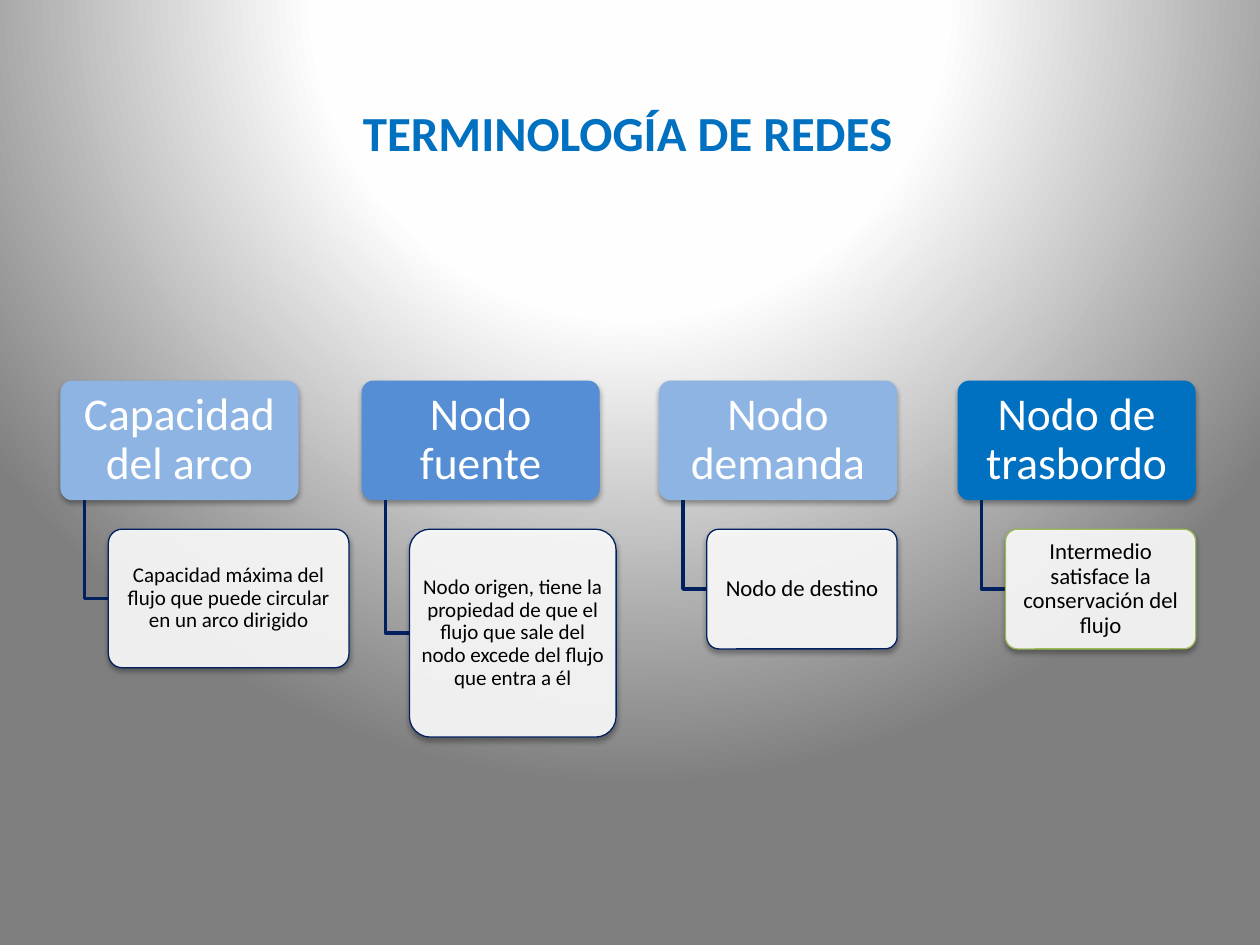
from dataclasses import dataclass

from pptx import Presentation
from pptx.dml.color import RGBColor
from pptx.enum.shapes import MSO_SHAPE
from pptx.enum.text import MSO_ANCHOR, PP_ALIGN
from pptx.oxml import parse_xml
from pptx.oxml.ns import nsdecls, qn
from pptx.util import Inches, Pt


@dataclass(frozen=True)
class Theme:
    font: str = "Calibri"
    blue: str = "0070C0"
    mid: str = "558ED5"
    pale: str = "8EB4E3"
    navy: str = "002060"
    green: str = "9BBB59"
    white: str = "FFFFFF"
    black: str = "000000"
    title: int = 28
    head: int = 26
    note: int = 13
    small: int = 12


@dataclass(frozen=True)
class Branch:
    left: float
    head: str
    fill: str
    note: str
    width: float
    height: float
    size: int
    edge: str


THEME = Theme()
TOP, WIDTH, HEIGHT = 3.02, 1.89, 0.95
STEM, INDENT, NOTE_TOP = 0.19, 0.38, 4.2

BRANCHES = [
    Branch(0.48, "Capacidad del arco", THEME.pale,
           "Capacidad máxima del flujo que puede circular en un arco dirigido",
           1.91, 1.1, THEME.small, THEME.navy),
    Branch(2.87, "Nodo fuente", THEME.mid,
           "Nodo origen, tiene la propiedad de que el flujo que sale del nodo "
           "excede del flujo que entra a él",
           1.64, 1.65, THEME.small, THEME.navy),
    Branch(5.23, "Nodo demanda", THEME.pale, "Nodo de destino",
           1.51, HEIGHT, THEME.note, THEME.navy),
    Branch(7.6, "Nodo de trasbordo", THEME.blue,
           "Intermedio satisface la conservación del flujo",
           1.51, HEIGHT, THEME.note, THEME.green),
]


def write(shape, text: str, *, size: int, color: str, bold: bool = False,
          inset: tuple = (0.1, 0.05), spacing: float = 1.0) -> None:
    """Put centred text into a shape."""
    frame = shape.text_frame
    frame.word_wrap = True
    frame.vertical_anchor = MSO_ANCHOR.MIDDLE
    frame.margin_left = frame.margin_right = Inches(inset[0])
    frame.margin_top = frame.margin_bottom = Inches(inset[1])
    para = frame.paragraphs[0]
    para.alignment = PP_ALIGN.CENTER
    para.line_spacing = spacing
    run = para.add_run()
    run.text = text
    run.font.name = THEME.font
    run.font.size = Pt(size)
    run.font.bold = bold
    run.font.color.rgb = RGBColor.from_string(color)


def add_box(slide, left: float, top: float, width: float, height: float,
            fill: str, edge: str = "", alpha: int = 100):
    """Draw a rounded box with a soft shadow below it."""
    box = slide.shapes.add_shape(MSO_SHAPE.ROUNDED_RECTANGLE, Inches(left),
                                 Inches(top), Inches(width), Inches(height))
    box.adjustments[0] = 0.1
    box.fill.solid()
    box.fill.fore_color.rgb = RGBColor.from_string(fill)
    if alpha < 100:
        tint = box._element.spPr.find(qn("a:solidFill"))[0]
        tint.append(parse_xml(f'<a:alpha {nsdecls("a")} val="{alpha * 1000}"/>'))
    if edge:
        box.line.color.rgb = RGBColor.from_string(edge)
        box.line.width = Pt(0.75)
    else:
        box.line.fill.background()
    box.shadow.inherit = False
    box._element.spPr.find(qn("a:effectLst")).append(parse_xml(
        f'<a:outerShdw {nsdecls("a")} blurRad="{Pt(3.1)}" dist="{Pt(1.8)}" '
        f'dir="5400000" rotWithShape="0"><a:srgbClr val="{THEME.black}">'
        '<a:alpha val="35000"/></a:srgbClr></a:outerShdw>'))
    return box


def add_elbow(slide, left: float, top: float, right: float, low: float) -> None:
    """Draw an open line that goes down and then right."""
    path = slide.shapes.build_freeform(Inches(left), Inches(top))
    path.add_line_segments([(Inches(left), Inches(low)),
                            (Inches(right), Inches(low))], close=False)
    line = path.convert_to_shape()
    line.fill.background()
    line.line.color.rgb = RGBColor.from_string(THEME.navy)
    line.line.width = Pt(2)
    line.shadow.inherit = False


def add_branch(slide, item: Branch) -> None:
    """Draw a heading, its elbow line and its note."""
    head = add_box(slide, item.left, TOP, WIDTH, HEIGHT, item.fill)
    write(head, item.head, size=THEME.head, color=THEME.white,
          inset=(0.05, 0.04), spacing=0.9)
    left = item.left + INDENT
    add_elbow(slide, item.left + STEM, TOP + HEIGHT, left,
              NOTE_TOP + item.height / 2)
    note = add_box(slide, left, NOTE_TOP, item.width, item.height,
                   THEME.white, item.edge, alpha=90)
    write(note, item.note, size=item.size, color=THEME.black,
          inset=(0.03, 0.02), spacing=0.9)


def paint(slide) -> None:
    """Fill the background with a round gradient centred above the slide."""
    slide.background.fill.gradient()
    old = next(slide._element.iter(qn("a:gradFill")))
    stops = "".join(
        f'<a:gs pos="{pos * 1000}"><a:srgbClr val="{color}"/></a:gs>'
        for pos, color in [(0, THEME.white), (40, "FEFEFE"), (100, "7F7F7F")])
    old.getparent().replace(old, parse_xml(
        f'<a:gradFill {nsdecls("a")} rotWithShape="1"><a:gsLst>{stops}</a:gsLst>'
        '<a:path path="circle"><a:fillToRect l="50000" t="-80000" r="50000" '
        'b="180000"/></a:path></a:gradFill>'))


def main() -> None:
    deck = Presentation()
    deck.slide_width, deck.slide_height = Inches(10), Inches(7.5)
    slide = deck.slides.add_slide(deck.slide_layouts[5])
    paint(slide)

    # Title
    title = slide.shapes.title
    title.left, title.top = Inches(1.36), Inches(0.76)
    title.width, title.height = Inches(7.24), Inches(0.57)
    write(title, "TERMINOLOGÍA DE REDES", size=THEME.title,
          color=THEME.blue, bold=True)

    # Four branches
    for item in BRANCHES:
        add_branch(slide, item)
    deck.save("out.pptx")


if __name__ == "__main__":
    main()
